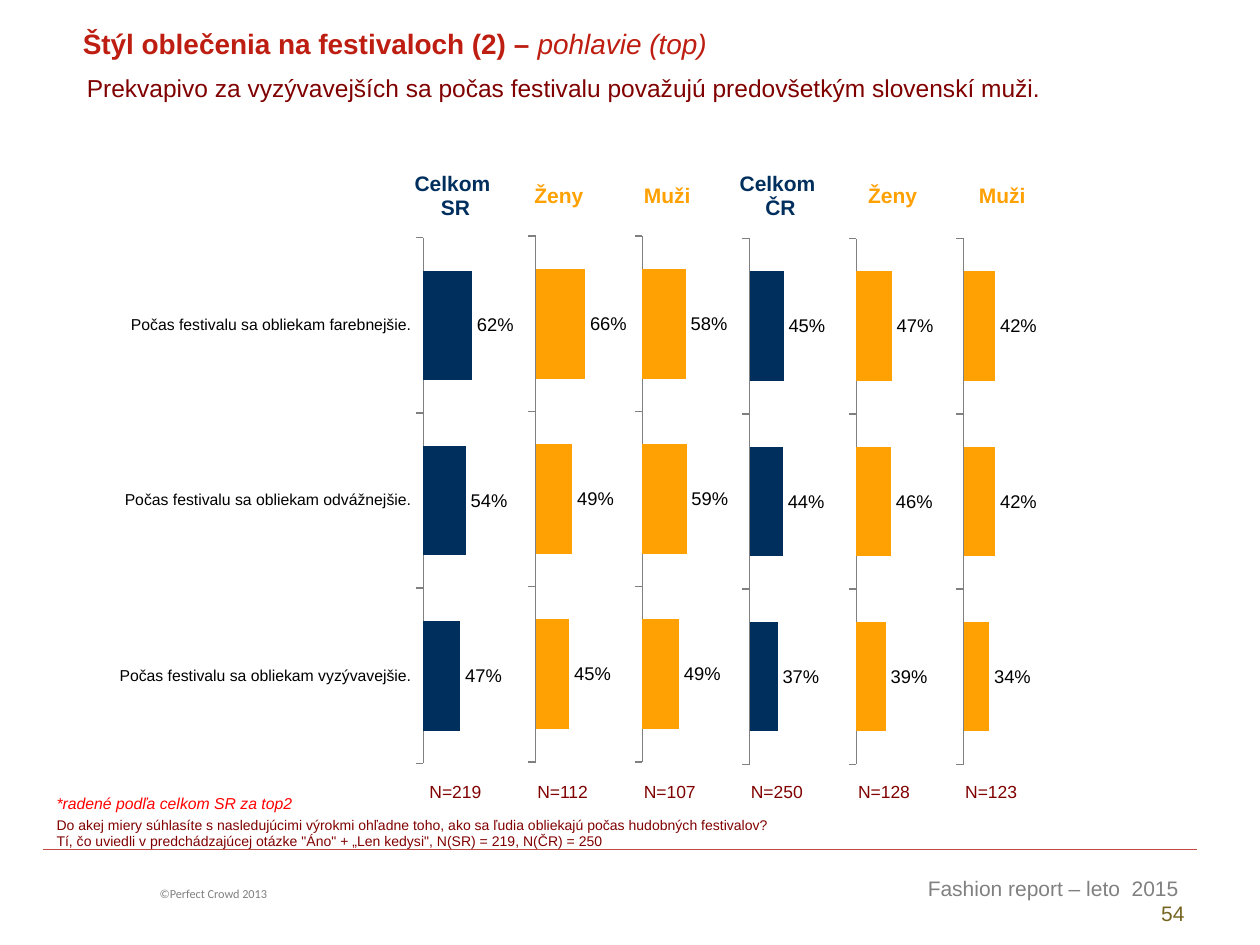
from lxml import etree
from pptx import Presentation
from pptx.chart.data import CategoryChartData
from pptx.dml.color import RGBColor
from pptx.enum.chart import XL_CHART_TYPE, XL_LABEL_POSITION, XL_TICK_LABEL_POSITION, XL_TICK_MARK
from pptx.enum.shapes import MSO_CONNECTOR
from pptx.enum.text import MSO_ANCHOR, PP_ALIGN
from pptx.oxml import parse_xml
from pptx.oxml.ns import nsdecls, qn
from pptx.util import Cm, Pt

BAR = XL_CHART_TYPE.BAR_CLUSTERED
OUTSIDE_END = XL_LABEL_POSITION.OUTSIDE_END
NO_LABELS = XL_TICK_LABEL_POSITION.NONE
TICK_OUT, TICK_NONE = XL_TICK_MARK.OUTSIDE, XL_TICK_MARK.NONE
LEFT, CENTER, RIGHT, JUSTIFY = PP_ALIGN.LEFT, PP_ALIGN.CENTER, PP_ALIGN.RIGHT, PP_ALIGN.JUSTIFY
NAVY, ORANGE, MAROON, GREY = "002F5E", "FFA102", "800000", "808080"


def rgb(value):
    return RGBColor.from_string(value)


def write(frame, text, size, color, align=LEFT, font="Arial", bold=False, italic=False):
    """Fill a text frame; each line of text becomes a paragraph."""
    frame.text = text
    for paragraph in frame.paragraphs:
        paragraph.alignment = align
        for run in paragraph.runs:
            run.font.name, run.font.size = font, Pt(size)
            run.font.bold, run.font.italic = bold, italic
            run.font.color.rgb = rgb(color)


prs = Presentation()
prs.slide_width, prs.slide_height = Cm(25.4), Cm(19.05)
slide = prs.slides.add_slide(prs.slide_layouts[6])
shapes = slide.shapes

# Footer rule
rule = shapes.add_connector(MSO_CONNECTOR.STRAIGHT, Cm(0.86), Cm(17.12), Cm(24.13), Cm(17.12))
rule.line.color.rgb = rgb("BF4C48")
rule.line.width = Pt(0.75)
etree.SubElement(rule._element.spPr, qn("a:effectLst"))

# Texts: left, top, width, height, text, size, colour, further formatting
texts = [
    (2.97, 17.75, 7.39, 0.56, "©Perfect Crowd 2013", 7, GREY, {"font": "Calibri"}),
    (14.71, 17.53, 9.42, 1.27, "Fashion report – leto  2015 \v54", 12, GREY, {"align": RIGHT}),
    (1.42, 0.41, 19.08, 0.94, "Štýl oblečenia na festivaloch (2) – ", 16, "BE1E11", {"bold": True}),
    (0.89, 16.33, 23.01, 0.94,
     "Do akej miery súhlasíte s nasledujúcimi výrokmi ohľadne toho, ako sa ľudia obliekajú "
     "počas hudobných festivalov?\n"
     "Tí, čo uviedli v predchádzajúcej otázke \"Áno\" + „Len kedysi\", N(SR) = 219, N(ČR) = 250",
     8, MAROON, {}),
    (1.5, 1.35, 22.81, 2.06,
     "Prekvapivo za vyzývavejších sa počas festivalu považujú predovšetkým slovenskí muži.",
     14, MAROON, {"align": JUSTIFY}),
    (0.89, 15.88, 5.38, 0.64, "*radené podľa celkom SR za top2", 9, "FF0000", {"italic": True}),
]
frames = []
for left, top, width, height, text, size, color, formatting in texts:
    frame = shapes.add_textbox(Cm(left), Cm(top), Cm(width), Cm(height)).text_frame
    frame.word_wrap = True
    write(frame, text, size, color, **formatting)
    frames.append(frame)
copyright_line, footer, title, question, subtitle, sorting_note = frames

sorting_note.word_wrap = False
footer.paragraphs[0].runs[1].font.color.rgb = rgb("756522")
title_group = title.paragraphs[0].add_run()
title_group.text = "pohlavie (top)"
title_group.font.name, title_group.font.size = "Arial", Pt(16)
title_group.font.bold, title_group.font.italic = False, True
title_group.font.color.rgb = rgb("BE1E11")

# Respondent groups: heading, colour, heading width, sample size
groups = [
    ("Celkom \nSR", NAVY, 2.16, "N=219"),
    ("Ženy", ORANGE, 2.01, "N=112"),
    ("Muži", ORANGE, 2.36, "N=107"),
    ("Celkom \nČR", NAVY, 2.21, "N=250"),
    ("Ženy", ORANGE, 2.31, "N=128"),
    ("Muži", ORANGE, 2.11, "N=123"),
]
headings = [(heading, color, width) for heading, color, width, sample in groups]
samples = [(sample, MAROON, 2.16) for heading, color, width, sample in groups]

for top, height, size, bold, cells in ((3.38, 1.12, 12, True, headings), (15.7, 0.53, 10, False, samples)):
    total = sum(width for text, color, width in cells)
    table = shapes.add_table(1, len(cells), Cm(8.1), Cm(top), Cm(total), Cm(height)).table
    table.first_row = table.horz_banding = False
    for column, (text, color, width) in enumerate(cells):
        table.columns[column].width = Cm(width)
        cell = table.cell(0, column)
        cell.fill.background()
        cell.vertical_anchor = MSO_ANCHOR.MIDDLE
        cell.margin_left = cell.margin_right = cell.margin_top = Cm(0.03)
        cell.margin_bottom = 0
        write(cell.text_frame, text, size, color, CENTER, bold=bold)

# Bar charts, right to left: left, top, width, plot start and plot width (shares of chart), values
statements = [
    "Počas festivalu sa obliekam vyzývavejšie.",
    "Počas festivalu sa obliekam odvážnejšie.",
    "Počas festivalu sa obliekam farebnejšie.",
]
charts = [
    (15.8, 4.01, 5.87, 0.618, 0.258, ORANGE, (34, 42, 42)),
    (13.61, 4.01, 5.87, 0.623, 0.258, ORANGE, (39, 46, 47)),
    (11.46, 4.01, 5.87, 0.623, 0.258, NAVY, (37, 44, 45)),
    (9.32, 3.96, 5.87, 0.618, 0.258, ORANGE, (49, 59, 58)),
    (7.14, 3.96, 5.87, 0.623, 0.258, ORANGE, (45, 49, 66)),
    (-0.97, 3.99, 11.81, 0.805, 0.134, NAVY, (47, 54, 62)),
]
for left, top, width, plot_left, plot_width, color, values in charts:
    has_statements = left < 0
    data = CategoryChartData()
    data.categories = statements if has_statements else ["1", "2", "3"]
    data.add_series("Series 1", values)
    chart = shapes.add_chart(BAR, Cm(left), Cm(top), Cm(width), Cm(12.34), data).chart
    chart.has_legend = chart.has_title = False
    chart.font.name, chart.font.size = "Arial", Pt(12)
    chart.font.color.rgb = rgb("000000")

    statement_axis = chart.category_axis
    statement_axis.major_tick_mark = TICK_OUT
    statement_axis.minor_tick_mark = TICK_NONE
    statement_axis.format.line.color.rgb = rgb(GREY)
    statement_axis.tick_labels.font.size = Pt(9 if has_statements else 11)
    if not has_statements:
        statement_axis.tick_label_position = NO_LABELS
    share_axis = chart.value_axis
    share_axis.visible = share_axis.has_major_gridlines = False
    share_axis.minimum_scale, share_axis.maximum_scale = 0, 100

    plot = chart.plots[0]
    plot.gap_width = 60
    plot.vary_by_categories = False
    bars = plot.series[0]
    bars.format.fill.solid()
    bars.format.fill.fore_color.rgb = rgb(color)
    labels = bars.data_labels
    labels.show_value = True
    labels.number_format, labels.number_format_is_linked = '#,##0"%"', False
    labels.position = OUTSIDE_END
    labels.font.size = Pt(10.5)
    labels.font.color.rgb = rgb("000000")

    # Transparent chart area and fixed inner plot area
    chart_xml = chart._chartSpace.find(qn("c:chart"))
    chart_xml.addnext(parse_xml(
        f'<c:spPr {nsdecls("c", "a")}><a:noFill/><a:ln><a:noFill/></a:ln></c:spPr>'))
    plot_area = chart_xml.find(qn("c:plotArea"))
    for old_layout in plot_area.findall(qn("c:layout")):
        plot_area.remove(old_layout)
    layout = parse_xml(f'<c:layout {nsdecls("c")}><c:manualLayout/></c:layout>')
    for tag, value in (("layoutTarget", "inner"), ("xMode", "edge"), ("yMode", "edge"),
                       ("x", plot_left), ("y", 0.065), ("w", plot_width), ("h", 0.859)):
        etree.SubElement(layout[0], qn(f"c:{tag}")).set("val", str(value))
    plot_area.insert(0, layout)

prs.save("out.pptx")
